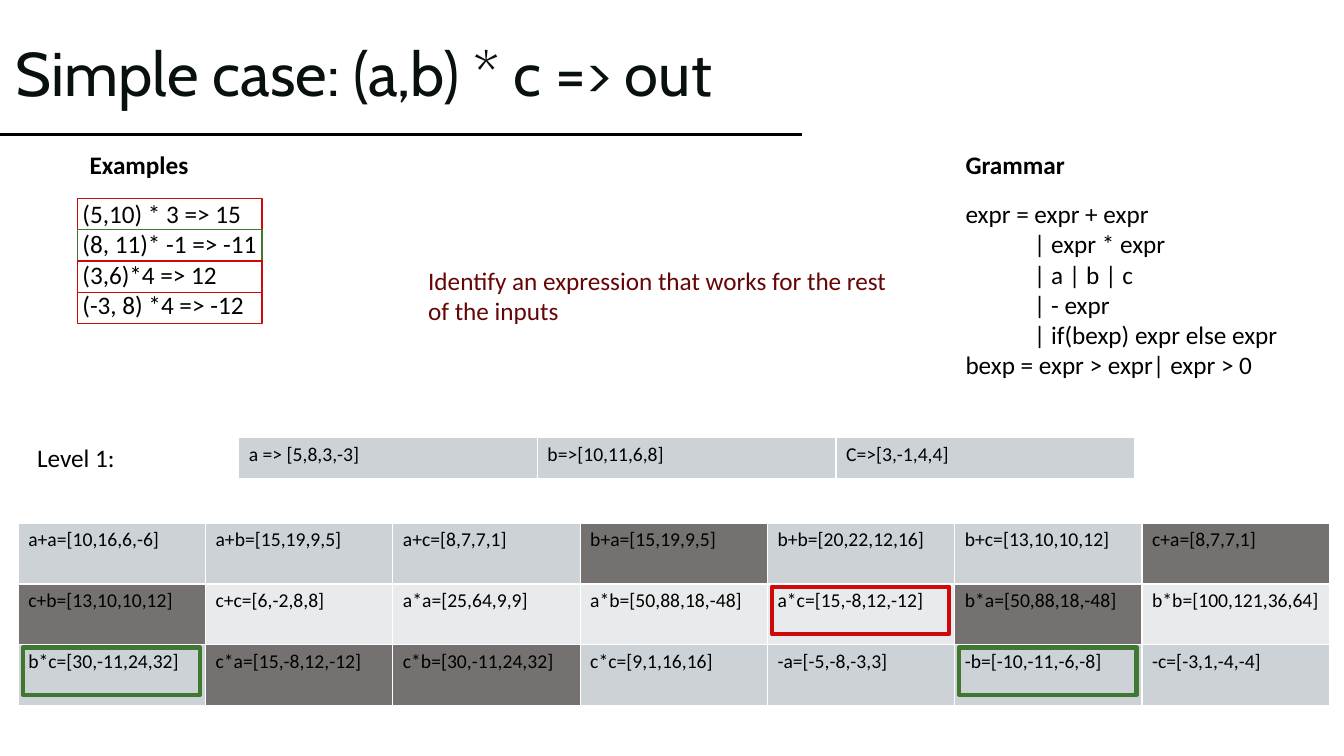
"""Builds the slide on searching expressions for (a,b) * c => out."""
from dataclasses import dataclass

from lxml.etree import SubElement as Sub
from pptx import Presentation
from pptx.dml.color import RGBColor as Rgb
from pptx.enum.shapes import MSO_CONNECTOR as Conn, MSO_SHAPE as Kind
from pptx.enum.text import MSO_ANCHOR as Anchor
from pptx.oxml.ns import qn
from pptx.util import Pt

TITLE = "Simple case: (a,b) * c => out"
CASES = ["(5,10) * 3 => 15", "(8, 11)* -1 => -11", "(3,6)*4 => 12", "(-3, 8) *4 => -12"]
RULES = ["expr = expr + expr", "| expr * expr", "| a | b | c", "| - expr",
         "| if(bexp) expr else expr", "bexp = expr > expr| expr > 0"]
GOAL = "Identify an expression that works for the rest\nof the inputs"
LEVEL = [["a => [5,8,3,-3]", "b=>[10,11,6,8]", "C=>[3,-1,4,4]"]]
TERMS = [
    ["a+a=[10,16,6,-6]", "a+b=[15,19,9,5]", "a+c=[8,7,7,1]", "b+a=[15,19,9,5]",
     "b+b=[20,22,12,16]", "b+c=[13,10,10,12]", "c+a=[8,7,7,1]"],
    ["c+b=[13,10,10,12]", "c+c=[6,-2,8,8]", "a*a=[25,64,9,9]", "a*b=[50,88,18,-48]",
     "a*c=[15,-8,12,-12]", "b*a=[50,88,18,-48]", "b*b=[100,121,36,64]"],
    ["b*c=[30,-11,24,32]", "c*a=[15,-8,12,-12]", "c*b=[30,-11,24,32]", "c*c=[9,1,16,16]",
     "-a=[-5,-8,-3,3]", "-b=[-10,-11,-6,-8]", "-c=[-3,1,-4,-4]"],
]


@dataclass(frozen=True)
class Theme:
    """Colours, fonts and type sizes."""
    ink: str = "000000"
    head: str = "08110B"
    goal: str = "660505"
    red: str = "CD0909"
    green: str = "3F7830"
    bands: tuple = ("CCD2D5", "E8EAEB")
    dim: str = "767171"
    rule: str = "FFFFFF"
    face: str = "Calibri"
    title: str = "Cabin"
    big: int = 44
    body: int = 18
    small: int = 14


T = Theme()
CASE_HUES = [T.red, T.green, T.red, T.red]
PICKS = [(1, 4, T.red), (2, 0, T.green), (2, 5, T.green)]
GRID = (13, 373.7, 133.8, 43.4)

deck = Presentation()
deck.slide_width, deck.slide_height = Pt(960), Pt(540)
slide = deck.slides.add_slide(deck.slide_layouts[6])
shapes = slide.shapes


def style(para, size=T.body, hue=T.ink, face=T.face, bold=False):
    font = para.font
    font.size, font.name, font.bold = Pt(size), face, bold
    font.color.rgb = Rgb.from_string(hue)


def write(lines, x, y, w, h, **look):
    frame = shapes.add_textbox(Pt(x), Pt(y), Pt(w), Pt(h)).text_frame
    frame.word_wrap = False
    for i, line in enumerate(lines):
        para = frame.paragraphs[0] if i == 0 else frame.add_paragraph()
        para.text = line
        style(para, **look)
        if line.startswith("|"):
            para._p.get_or_add_pPr().set("marL", str(Pt(48.8)))
    return frame


def edge(cell):
    props = cell._tc.get_or_add_tcPr()
    for i, side in enumerate(("a:lnL", "a:lnR", "a:lnT", "a:lnB")):
        line = props.makeelement(qn(side), {"w": str(Pt(1))})
        fill = Sub(line, qn("a:solidFill"))
        Sub(fill, qn("a:srgbClr"), val=T.rule)
        props.insert(i, line)


def grid(rows, x, y, wide, high):
    count = len(rows[0])
    table = shapes.add_table(len(rows), count, Pt(x), Pt(y),
                             Pt(wide * count), Pt(high * len(rows))).table
    table.first_row = table.horz_banding = False
    seen = set()
    for r, row in enumerate(rows):
        table.rows[r].height = Pt(high)
        for c, term in enumerate(row):
            table.columns[c].width = Pt(wide)
            cell = table.cell(r, c)
            cell.text = term
            style(cell.text_frame.paragraphs[0], size=T.small)
            value = term.split("=", 1)[1]
            hue = T.dim if value in seen else T.bands[r % 2]
            seen.add(value)
            cell.fill.solid()
            cell.fill.fore_color.rgb = Rgb.from_string(hue)
            edge(cell)


def box(x, y, w, h, hue, line):
    shape = shapes.add_shape(Kind.RECTANGLE, Pt(x), Pt(y), Pt(w), Pt(h))
    shape.shadow.inherit = False
    shape.fill.background()
    shape.line.color.rgb = Rgb.from_string(hue)
    shape.line.width = Pt(line)


rule = shapes.add_connector(Conn.STRAIGHT, Pt(0), Pt(96), Pt(573), Pt(96))
rule.line.color.rgb = Rgb.from_string(T.ink)
rule.line.width = Pt(2.25)
Sub(rule._element.spPr, qn("a:effectLst"))

title = write([TITLE], 4.3, 2.2, 540.7, 104.4, size=T.big, hue=T.head, face=T.title)
title.word_wrap = True
title.vertical_anchor = Anchor.MIDDLE
title.paragraphs[0].line_spacing = 0.9

write(RULES, 682.6, 138.2, 240.5, 138.2)
write(CASES, 51.8, 138.2, 140.4, 94.3)
write(["Grammar"], 682.6, 103, 86.4, 28.8, bold=True)
write(["Examples"], 56.9, 103, 85.7, 28.8, bold=True)
write(["Level 1:"], 19.4, 312.5, 74.9, 28.8)
grid(TERMS, *GRID)
grid(LEVEL, 170.6, 312.5, 213.3, 29.2)
write([GOAL], 298.8, 185.8, 345.6, 51.1, hue=T.goal)

for i, hue in enumerate(CASE_HUES):
    box(55.4, 141.8 + 22.3 * i, 131.8, 22.3, hue, 0.85)
left, top, wide, high = GRID
for r, c, hue in PICKS:
    box(left + c * wide + 3.2, top + r * high + 2, 126.7, 33.8, hue, 3)

deck.save("out.pptx")
